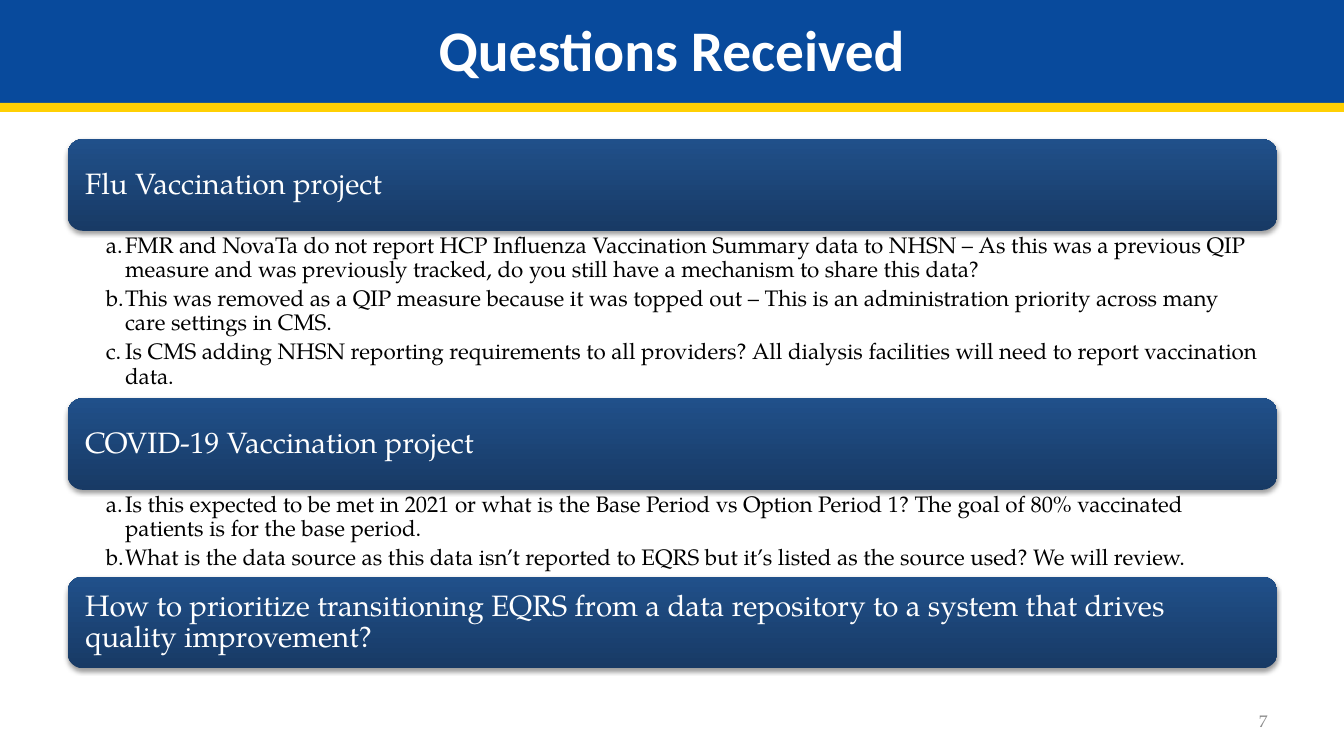
from lxml import etree
from pptx import Presentation
from pptx.dml.color import RGBColor
from pptx.enum import shapes, text
from pptx.oxml import ns
from pptx.util import Inches, Pt

BLUE = RGBColor(0x08, 0x4A, 0x9C)
GOLD = RGBColor(0xFF, 0xD0, 0x04)
NAVY = RGBColor(0x18, 0x3A, 0x65)
STEEL = RGBColor(0x20, 0x50, 0x8A)
WHITE = RGBColor(0xFF, 0xFF, 0xFF)
BLACK = RGBColor(0, 0, 0)
GRAY = RGBColor(0x8C, 0x8C, 0x8C)
SERIF = "TeX Gyre Pagella"
SANS = "Calibri"
WIDTH, HEIGHT = 13.33, 7.5
BAR = 0.91

TOPICS = [
    ("Flu Vaccination project", 1.66, [
        "FMR and NovaTa do not report HCP Influenza Vaccination Summary data to NHSN – As this was "
        "a previous QIP measure and was previously tracked, do you still have a mechanism to share "
        "this data?",
        "This was removed as a QIP measure because it was topped out – This is an administration "
        "priority across many care settings in CMS.",
        "Is CMS adding NHSN reporting requirements to all providers? All dialysis facilities will "
        "need to report vaccination data.",
    ]),
    ("COVID-19 Vaccination project", 0.86, [
        "Is this expected to be met in 2021 or what is the Base Period vs Option Period 1? The goal "
        "of 80% vaccinated patients is for the base period.",
        "What is the data source as this data isn’t reported to EQRS but it’s listed as the source "
        "used? We will review.",
    ]),
    ("How to prioritize transitioning EQRS from a data repository to a system that drives quality "
     "improvement?", 0, []),
]


def add_xml(parent, tag, **attrs):
    return etree.SubElement(parent, ns.qn(tag), attrs)


def add_box(slide, kind, left, top, width, height):
    """Add a preset shape without line or shadow."""
    box = slide.shapes.add_shape(
        kind, Inches(left), Inches(top), Inches(width), Inches(height))
    box.shadow.inherit = False
    box.line.fill.background()
    return box


def add_text(slide, left, top, width, height):
    return slide.shapes.add_textbox(
        Inches(left), Inches(top), Inches(width), Inches(height)).text_frame


def set_text(frame, lines, size, color, font=SERIF, bold=False, space=0.9,
             align=text.PP_ALIGN.LEFT, anchor=text.MSO_ANCHOR.MIDDLE):
    frame.word_wrap = True
    frame.vertical_anchor = anchor
    frame.text = "\n".join(lines)
    for para in frame.paragraphs:
        para.alignment = align
        para.line_spacing = space
        for run in para.runs:
            run.font.name = font
            run.font.size = Pt(size)
            run.font.bold = bold
            run.font.color.rgb = color


def set_inset(frame, left, top, right, bottom):
    frame.margin_left, frame.margin_top = Inches(left), Inches(top)
    frame.margin_right, frame.margin_bottom = Inches(right), Inches(bottom)


def add_shadow(shape):
    effects = shape._element.spPr.find(ns.qn("a:effectLst"))
    outer = add_xml(effects, "a:outerShdw", blurRad=str(Pt(3.1)), dist=str(Pt(2)),
                    dir="5400000", rotWithShape="0")
    color = add_xml(outer, "a:srgbClr", val=str(BLACK))
    add_xml(color, "a:alpha", val="38000")


def add_header(slide, left, top, width):
    for y, height, color in ((0, 1.02, BLUE), (1.02, 0.09, GOLD)):
        band = add_box(slide, shapes.MSO_SHAPE.RECTANGLE, left, top + y, width, height)
        band.fill.solid()
        band.fill.fore_color.rgb = color
    frame = add_text(slide, left, top + 0.15, width, 0.76)
    set_text(frame, ["Questions Received"], 41, WHITE, SANS, True,
             align=text.PP_ALIGN.CENTER)


def add_bar(slide, label, left, top, width):
    bar = add_box(slide, shapes.MSO_SHAPE.ROUNDED_RECTANGLE, left, top, width, BAR)
    bar.fill.gradient()
    bar.fill.gradient_angle = 90
    for stop, color in zip(bar.fill.gradient_stops, (NAVY, STEEL)):
        stop.color.rgb = color
    add_shadow(bar)
    set_inset(bar.text_frame, 0.13, 0.13, 0.13, 0.13)
    set_text(bar.text_frame, [label], 21, WHITE)


def add_points(slide, points, left, top, width, height):
    """Add the lettered list below a bar."""
    frame = add_text(slide, left, top, width, height)
    set_inset(frame, 0.38, 0.03, 0.16, 0.03)
    set_text(frame, points, 16, BLACK, anchor=text.MSO_ANCHOR.TOP)
    for para in frame.paragraphs:
        para.space_after = Pt(3.6)
        props = para._p.get_or_add_pPr()
        props.set("marL", str(Inches(0.19)))
        props.set("indent", str(Inches(-0.19)))
        add_xml(props, "a:buFont", typeface=SERIF)
        add_xml(props, "a:buAutoNum", type="alphaLcPeriod")


def add_topics(slide, left, top, width):
    for label, height, points in TOPICS:
        add_bar(slide, label, left, top, width)
        if points:
            add_points(slide, points, left, top + BAR, width, height)
        top += BAR + height


def add_number(slide, left, top, width, height):
    frame = add_text(slide, left, top, width, height)
    set_text(frame, ["7"], 12, GRAY, space=1.0, align=text.PP_ALIGN.RIGHT)


def main():
    deck = Presentation()
    deck.slide_width, deck.slide_height = Inches(WIDTH), Inches(HEIGHT)
    slide = deck.slides.add_slide(deck.slide_layouts[6])
    add_header(slide, 0, 0, WIDTH)
    add_topics(slide, 0.67, 1.38, 12)
    add_number(slide, 9.56, 6.95, 3.11, 0.4)
    deck.save("out.pptx")


if __name__ == "__main__":
    main()
